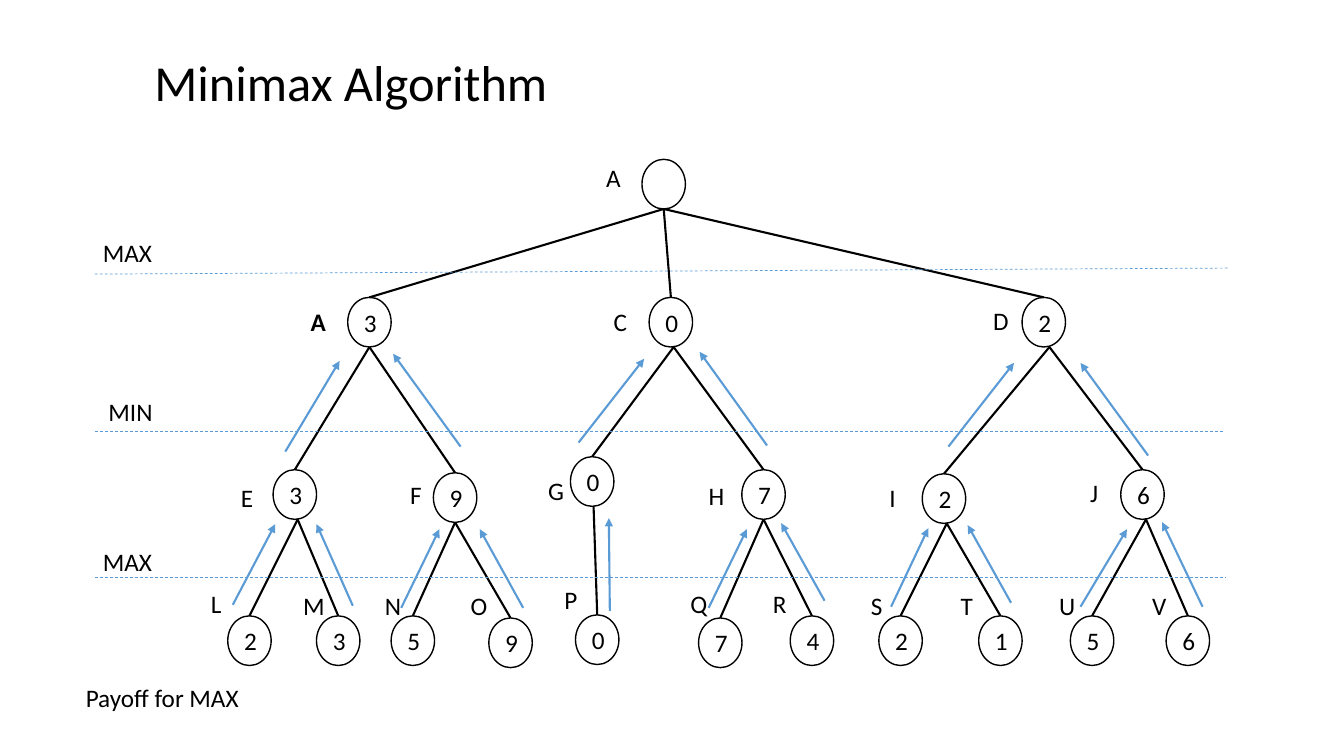
from dataclasses import dataclass
from typing import NamedTuple

from lxml import etree
from pptx import Presentation
from pptx.dml.color import RGBColor
from pptx.enum.dml import MSO_LINE
from pptx.enum.shapes import MSO_CONNECTOR, MSO_SHAPE
from pptx.enum.text import MSO_ANCHOR, MSO_AUTO_SIZE, PP_ALIGN
from pptx.oxml.ns import qn
from pptx.util import Pt

STRAIGHT = MSO_CONNECTOR.STRAIGHT
OVAL = MSO_SHAPE.OVAL
DASH = MSO_LINE.DASH
LEFT, CENTER = PP_ALIGN.LEFT, PP_ALIGN.CENTER
TOP, MIDDLE = MSO_ANCHOR.TOP, MSO_ANCHOR.MIDDLE
GROW = MSO_AUTO_SIZE.SHAPE_TO_FIT_TEXT


@dataclass(frozen=True)
class Theme:
    font: str = "Calibri"
    ink: RGBColor = RGBColor(0, 0, 0)
    paper: RGBColor = RGBColor(255, 255, 255)
    blue: RGBColor = RGBColor(0x5B, 0x9B, 0xD5)
    title: float = 36
    body: float = 18
    thin: float = 0.5
    rim: float = 1
    bold: float = 1.5


THEME = Theme()
NODE_W, NODE_H = 31, 35.5
TEXT_H = 28.8


class Span(NamedTuple):
    x1: float
    y1: float
    x2: float
    y2: float


class Node(NamedTuple):
    key: str
    up: str             # key of the parent
    value: str
    x: float
    y: float
    label_x: float
    label_y: float
    label_w: float = 22.3
    foot: float = 0     # shift of the point where child edges start


class Label(NamedTuple):
    text: str
    x: float
    y: float
    w: float


# Tree, level by level
NODES = [
    Node("A", "", "", 458.6, 113.8, 425.5, 112.3, 25.2),
    Node("B", "A", "3", 248.4, 212.4, 214.3, 215.3, 26),
    Node("C", "A", "0", 463.7, 212.4, 431.3, 215.3, 20.2, 2),
    Node("D", "A", "2", 730.1, 212.4, 702, 214.6, 25.9, 4),
    Node("E", "B", "3", 195.1, 335.5, 164.9, 341.3, foot=2),
    Node("F", "B", "9", 309.6, 337.7, 285.8, 339.1),
    Node("G", "C", "0", 407.5, 326.2, 384.5, 336.2, foot=1),
    Node("H", "C", "7", 529.9, 335.5, 499, 339.8),
    Node("I", "D", "2", 658.8, 338.4, 626.4, 341.3, foot=2),
    Node("J", "D", "6", 800.6, 335.5, 770.4, 337.7, foot=2.5),
    Node("L", "E", "2", 162.7, 439.9, 143.3, 416.9),
    Node("M", "E", "3", 226.1, 439.9, 209.5, 418.3),
    Node("N", "F", "5", 279.4, 439.9, 267.8, 418.3),
    Node("O", "F", "9", 349.2, 441.4, 329, 418.3),
    Node("P", "G", "0", 411.1, 439.2, 396, 414),
    Node("Q", "H", "7", 499, 441.4, 486, 416.9),
    Node("R", "H", "4", 564.5, 439.9, 545, 416.9),
    Node("S", "I", "2", 627.8, 439.9, 614.9, 418.3),
    Node("T", "I", "1", 699.1, 439.9, 679, 418.3),
    Node("U", "J", "5", 764.6, 439.9, 749.5, 418.3),
    Node("V", "J", "6", 833, 439.9, 815.8, 418.3),
]

# Values passed upwards
ARROWS = [
    Span(203.8, 322.6, 242.6, 257.8),
    Span(329, 319, 280.8, 252.7),
    Span(413.3, 316.1, 460.1, 256.3),
    Span(547.9, 318.2, 499.7, 251.3),
    Span(677.5, 319, 724.3, 259.2),
    Span(820.1, 325.4, 771.8, 259.2),
    Span(166.3, 432, 196.6, 374.4),
    Span(252, 432.7, 226.1, 374.4),
    Span(286.6, 434.2, 313.9, 378),
    Span(373.7, 434.2, 342.7, 378),
    Span(435.6, 436.3, 434.9, 370.1),
    Span(506.2, 434.2, 533.5, 378),
    Span(589, 429.1, 558, 373.7),
    Span(636.5, 433.4, 663.1, 377.3),
    Span(722.2, 430.6, 691.2, 375.1),
    Span(771.8, 433.4, 805, 378),
    Span(859, 433.4, 830.2, 373),
]

# Borders between the levels
BORDERS = [
    Span(67.7, 195.8, 878.4, 191.5),
    Span(67.7, 308.2, 874.8, 308.2),
    Span(67.7, 412.6, 875.5, 412.6),
]

SIDES = [
    Label("MAX", 66.2, 166.3, 49.7),
    Label("MIN", 67.7, 279.4, 51.1),
    Label("MAX", 66.2, 386.6, 49.7),
    Label("Payoff for MAX", 53.3, 483.8, 125.3),
]


def write(frame, text: str, size: float, align=CENTER, bold: bool = False) -> None:
    para = frame.paragraphs[0]
    para.alignment = align
    run = para.add_run()
    run.text = text
    run.font.name = THEME.font
    run.font.size = Pt(size)
    run.font.bold = bold
    run.font.color.rgb = THEME.ink


def add_text(slide, label: Label, wrap: bool = False, bold: bool = False) -> None:
    box = slide.shapes.add_textbox(Pt(label.x), Pt(label.y), Pt(label.w), Pt(TEXT_H))
    box.text_frame.word_wrap = wrap
    box.text_frame.auto_size = GROW
    write(box.text_frame, label.text, THEME.body, bold=bold)


def add_node(slide, node: Node):
    oval = slide.shapes.add_shape(OVAL, Pt(node.x), Pt(node.y), Pt(NODE_W), Pt(NODE_H))
    oval.shadow.inherit = False
    oval.fill.solid()
    oval.fill.fore_color.rgb = THEME.paper
    oval.line.color.rgb = THEME.ink
    oval.line.width = Pt(THEME.rim)
    oval.text_frame.vertical_anchor = MIDDLE
    if node.value:
        write(oval.text_frame, node.value, THEME.body)
    return oval


def add_line(slide, span: Span, color: RGBColor, width: float):
    line = slide.shapes.add_connector(STRAIGHT, *(Pt(v) for v in span))
    line.line.color.rgb = color
    line.line.width = Pt(width)
    etree.SubElement(line._element.spPr, qn("a:effectLst"))
    return line


def add_title(slide, text: str) -> None:
    title = slide.shapes.title
    title.left, title.top, title.width, title.height = Pt(103), Pt(33.1), Pt(298), Pt(51.1)
    frame = title.text_frame
    frame.word_wrap = False
    frame.auto_size = GROW
    frame.vertical_anchor = TOP
    write(frame, text, THEME.title, LEFT)


def main() -> None:
    deck = Presentation()
    deck.slide_width, deck.slide_height = Pt(960), Pt(540)
    slide = deck.slides.add_slide(deck.slide_layouts[5])
    add_title(slide, "Minimax Algorithm")

    # Nodes, then the edges between them
    ovals = {node.key: add_node(slide, node) for node in NODES}
    by_key = {node.key: node for node in NODES}
    for node in NODES[1:]:
        top = by_key[node.up]
        span = Span(top.x + NODE_W / 2 + top.foot, top.y + NODE_H,
                    node.x + NODE_W / 2, node.y)
        edge = add_line(slide, span, THEME.ink, THEME.bold)
        edge.end_connect(ovals[node.key], 0)

    # Node names and side text
    for node in NODES:
        chosen = node.key == "B"
        name = "A" if chosen else node.key
        add_text(slide, Label(name, node.label_x, node.label_y, node.label_w), True, chosen)
    for side in SIDES:
        add_text(slide, side)

    # Level borders and arrows
    for span in BORDERS:
        add_line(slide, span, THEME.blue, THEME.thin).line.dash_style = DASH
    for span in ARROWS:
        arrow = add_line(slide, span, THEME.blue, THEME.bold)
        etree.SubElement(arrow.line._get_or_add_ln(), qn("a:tailEnd"), type="triangle")

    deck.save("out.pptx")


if __name__ == "__main__":
    main()
